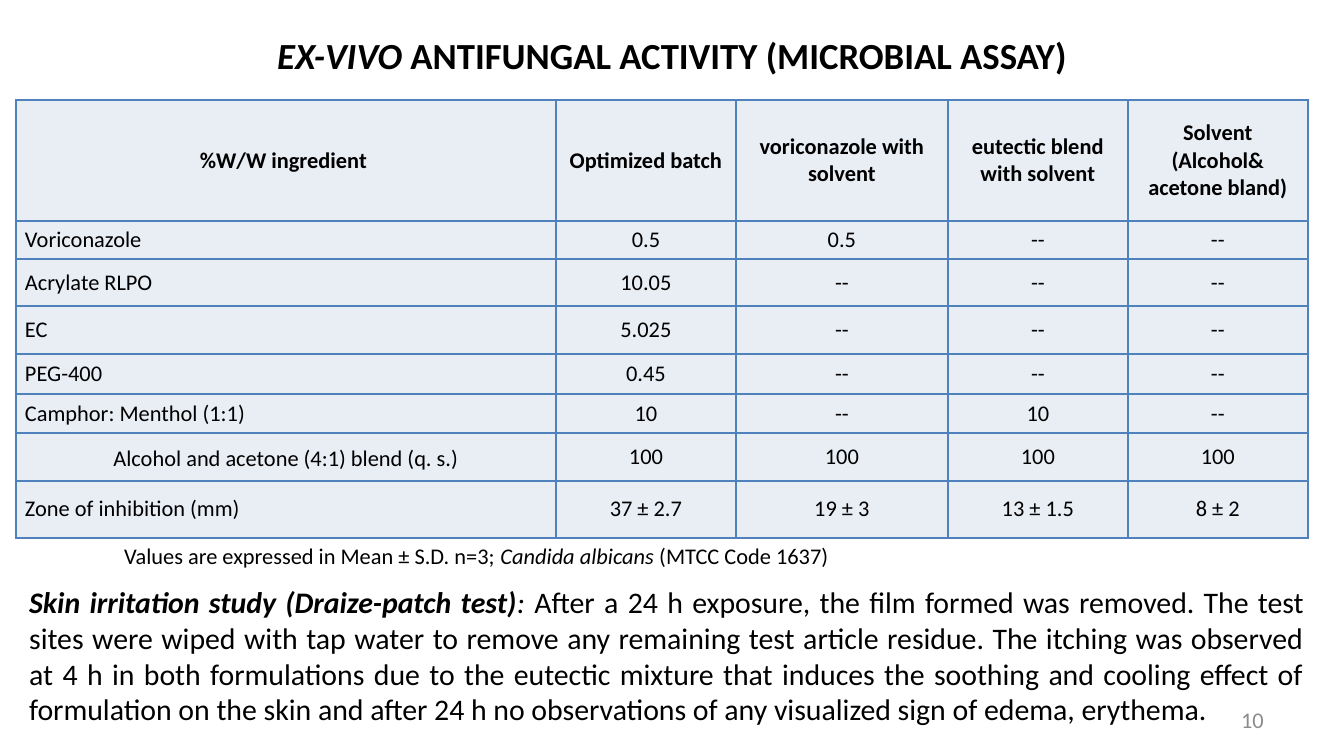
import pptx
import pptx.dml.color
import pptx.enum.text
import pptx.oxml
import pptx.oxml.ns
import pptx.util

# Content
TITLE = [("EX-VIVO", dict(italic=True)), (" ANTIFUNGAL ACTIVITY (MICROBIAL ASSAY)", dict(italic=False))]
ROWS = [
    ("%W/W ingredient ", "Optimized batch", "voriconazole with solvent",
     "eutectic blend with solvent", "Solvent (Alcohol& acetone bland)"),
    ("Voriconazole", "0.5", "0.5", "--", "--"),
    ("Acrylate RLPO", "10.05", "--", "--", "--"),
    ("EC", "5.025", "--", "--", "--"),
    ("PEG-400", "0.45", "--", "--", "--"),
    ("Camphor: Menthol (1:1)", "10", "--", "10", "--"),
    ("Alcohol and acetone (4:1) blend (q. s.)", "100", "100", "100", "100"),
    ("Zone of inhibition (mm)", "37 ± 2.7", "19 ± 3", "13 ± 1.5", "8 ± 2"),
]
BLEND_ROW = 6
NOTE = [("Values are expressed in Mean ± S.D. n=3; ", {}),
        ("Candida albicans ", dict(italic=True)),
        ("(MTCC Code 1637)", {})]
STUDY = [("Skin irritation study (Draize-patch test)", dict(bold=True, italic=True)),
         (": ", dict(italic=True)),
         ("After a 24 h exposure, the film formed was removed. The test sites were wiped with tap "
          "water to remove any remaining test article residue. The itching was observed at 4 h in "
          "both formulations due to the eutectic mixture that induces the soothing and cooling "
          "effect of formulation on the skin and after 24 h no observations of any visualized sign "
          "of edema, erythema.", {})]
NUMBER = [("10", {})]

THEME = dict(font="Calibri", text="000000", muted="8C8C8C", cell="E9EDF4", border="4F81BD",
             title=34, body=16, small=12)

# Layout in px
SLIDE = (1344, 756)
TITLE_BOX = (0, 8, 1344, 77)
TABLE_AT = (16, 100)
COLS = (540, 180, 212, 180, 180)
HEIGHTS = (121, 38, 47, 48, 40, 39, 48, 57)
NUMBER_BOX = (964, 700, 313, 40)
NOTE_BOX = (111, 536, 763, 40)
STUDY_BOX = (16, 577, 1302, 159)

ALIGN = pptx.enum.text.PP_ALIGN
MIDDLE = pptx.enum.text.MSO_ANCHOR.MIDDLE
FIT = pptx.enum.text.MSO_AUTO_SIZE


def px(n):
    return pptx.util.Emu(round(n * 914400 / 134.4))


def put(obj, values):
    for name, value in values.items():
        setattr(obj, name, value)


def place(s, box):
    put(s, dict(zip(("left", "top", "width", "height"), map(px, box))))


def write(tf, runs, size, align, color="text", bold=False):
    p = tf.paragraphs[0]
    p.alignment = align
    for text, style in runs:
        r = p.add_run()
        r.text = text
        put(r.font, dict(name=THEME["font"], size=pptx.util.Pt(THEME[size]), bold=bold) | style)
        r.font.color.rgb = pptx.dml.color.RGBColor.from_string(THEME[color])
    return p


def add_text(sp, box, runs, size, align, color="text", **frame):
    s = sp.add_textbox(*map(px, box))
    put(s.text_frame, dict(word_wrap=True) | frame)
    write(s.text_frame, runs, size, align, color)


def add_borders(cell):
    pr = cell._tc.get_or_add_tcPr()
    for i, side in enumerate(("lnL", "lnR", "lnT", "lnB")):
        pr.insert(i, pptx.oxml.parse_xml(
            f'<a:{side} {pptx.oxml.ns.nsdecls("a")} w="12700"><a:solidFill>'
            f'<a:srgbClr val="{THEME["border"]}"/></a:solidFill></a:{side}>'))


def add_grid(sp):
    t = sp.add_table(len(ROWS), len(COLS), *map(px, (*TABLE_AT, sum(COLS), sum(HEIGHTS)))).table
    put(t, dict(first_row=False, horz_banding=False))
    for col, w in zip(t.columns, COLS):
        col.width = px(w)
    for row, h in zip(t.rows, HEIGHTS):
        row.height = px(h)
    for i, row in enumerate(ROWS):
        for j, text in enumerate(row):
            cell = t.cell(i, j)
            put(cell, dict(margin_left=px(9), margin_right=px(9), margin_top=0, margin_bottom=0,
                           vertical_anchor=MIDDLE))
            cell.fill.solid()
            cell.fill.fore_color.rgb = pptx.dml.color.RGBColor.from_string(THEME["cell"])
            add_borders(cell)
            left = j == 0 and i not in (0, BLEND_ROW)
            p = write(cell.text_frame, [(text, {})], "small",
                      ALIGN.LEFT if left else ALIGN.CENTER, bold=i == 0)
            if (i, j) == (BLEND_ROW, 0):
                p.line_spacing = 1.15


def main():
    prs = pptx.Presentation()
    prs.slide_width, prs.slide_height = map(px, SLIDE)
    slide = prs.slides.add_slide(prs.slide_layouts[5])
    sp = slide.shapes

    # Title, slightly raised from the baseline
    place(sp.title, TITLE_BOX)
    put(sp.title.text_frame, dict(vertical_anchor=MIDDLE, auto_size=FIT.NONE, word_wrap=True))
    p = write(sp.title.text_frame, TITLE, "title", ALIGN.CENTER, bold=True)
    for r in p.runs:
        r._r.get_or_add_rPr().set("baseline", "3000")

    # Assay table
    add_grid(sp)

    # Slide number, table note and study text
    add_text(sp, NUMBER_BOX, NUMBER, "small", ALIGN.RIGHT, "muted", vertical_anchor=MIDDLE)
    add_text(sp, NOTE_BOX, NOTE, "small", ALIGN.LEFT, word_wrap=False,
             auto_size=FIT.SHAPE_TO_FIT_TEXT)
    add_text(sp, STUDY_BOX, STUDY, "body", ALIGN.JUSTIFY, auto_size=FIT.SHAPE_TO_FIT_TEXT)

    prs.save("out.pptx")


if __name__ == "__main__":
    main()
